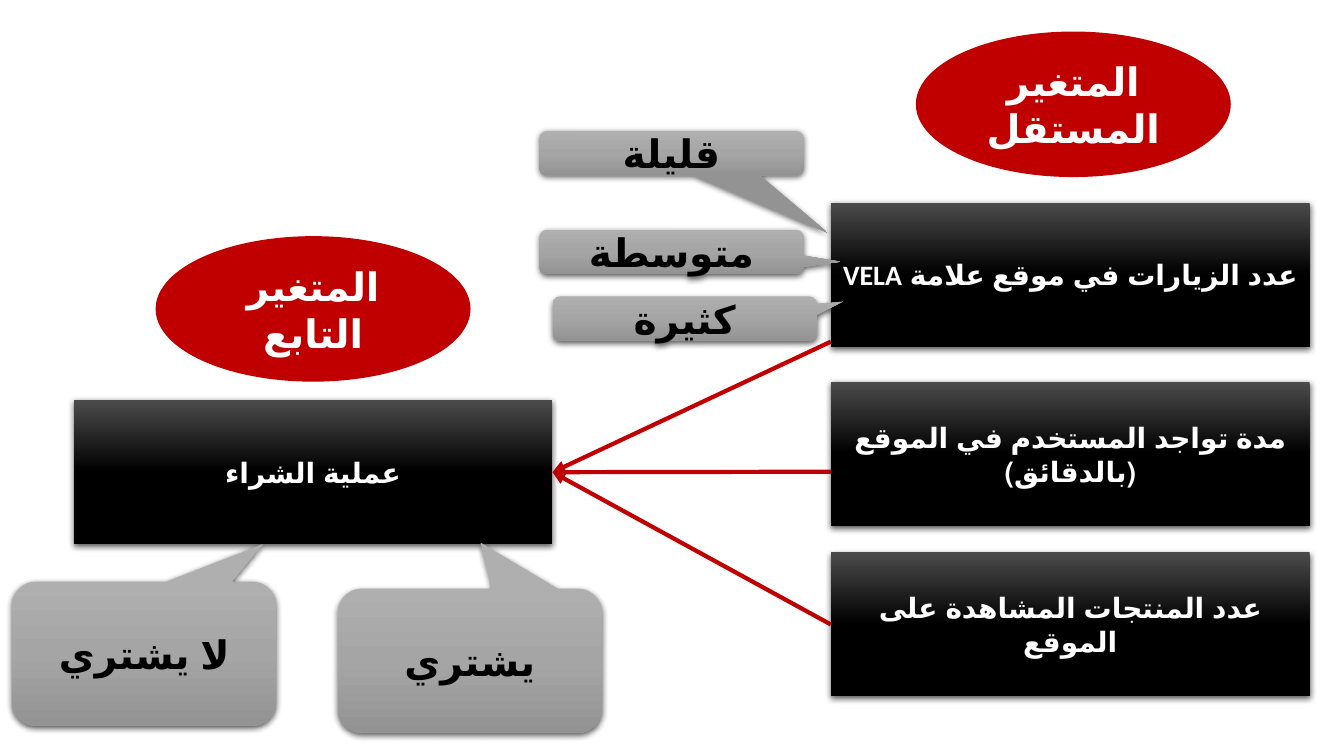
from copy import deepcopy
from dataclasses import dataclass

from pptx import Presentation
from pptx import util as u
from pptx.dml.color import RGBColor
from pptx.enum import lang, shapes, text
from pptx.oxml import parse_xml
from pptx.oxml.ns import nsdecls, qn


@dataclass(frozen=True)
class Theme:
    font: str = "Calibri"
    red: str = "C00000"
    white: str = "FFFFFF"
    black: str = "000000"
    dark: tuple = ("4B4B4B", "000000", "000000")
    grey: tuple = ("AFAFAF", "A5A5A5", "939393")
    box_size: int = 20
    label_size: int = 28
    outline: int = 1
    arrow: int = 3


THEME = Theme()
BOX_SIZE = (4.75, 1.43)
OVAL_SIZE = (3.11, 1.43)
CALLOUT_WIDTH = 2.62
RECTANGLE_LEFT, RECTANGLE_RIGHT = 1, 3


def rgb(value):
    return RGBColor.from_string(value)


def apply_format(target, values):
    for name, value in values.items():
        setattr(target, name, value)


def add_block(slide, kind, position, size, words, font_size, color, rtl=False):
    """Add a shape with centred bold Arabic text."""
    shape = slide.shapes.add_shape(kind, *map(u.Inches, position + size))
    shape.shadow.inherit = False
    frame = shape.text_frame
    apply_format(frame, {"word_wrap": True,
                         "vertical_anchor": text.MSO_ANCHOR.MIDDLE})
    paragraph = frame.paragraphs[0]
    paragraph.alignment = text.PP_ALIGN.CENTER
    if rtl:
        paragraph._p.get_or_add_pPr().set("rtl", "1")
    run = paragraph.add_run()
    run.text = words
    apply_format(run.font, {"name": THEME.font, "size": u.Pt(font_size), "bold": True,
                            "language_id": lang.MSO_LANGUAGE_ID.ARABIC_ALGERIA})
    run.font.color.rgb = rgb(color)
    return shape


def add_gloss(shape, colors):
    """Give a shape a vertical three-stop gradient and a soft shadow."""
    shape.line.fill.background()
    shape.fill.gradient()
    shape.fill.gradient_angle = 270
    properties = shape._element.spPr
    stop_list = properties.find(qn("a:gradFill")).find(qn("a:gsLst"))
    stop_list.append(deepcopy(stop_list[-1]))
    for stop, color, place in zip(shape.fill.gradient_stops, colors, (0, 0.5, 1)):
        stop.color.rgb = rgb(color)
        stop.position = place
    properties.find(qn("a:effectLst")).append(parse_xml(
        f'<a:outerShdw {nsdecls("a")} blurRad="{u.Pt(4.5)}" dist="{u.Pt(1.5)}" '
        f'dir="5400000" rotWithShape="0"><a:srgbClr val="{THEME.black}">'
        '<a:alpha val="63000"/></a:srgbClr></a:outerShdw>'))


def add_variable_box(slide, left, top, words):
    box = add_block(slide, shapes.MSO_SHAPE.RECTANGLE, (left, top), BOX_SIZE,
                    words, THEME.box_size, THEME.white, rtl=True)
    add_gloss(box, THEME.dark)
    return box


def add_heading_oval(slide, left, top, words):
    oval = add_block(slide, shapes.MSO_SHAPE.OVAL, (left, top), OVAL_SIZE,
                     words, THEME.label_size, THEME.white)
    oval.fill.solid()
    oval.fill.fore_color.rgb = rgb(THEME.red)
    oval.line.color.rgb = rgb(THEME.red)
    oval.line.width = u.Pt(THEME.outline)


def add_callout(slide, left, top, height, pointer, words):
    callout = add_block(slide, shapes.MSO_SHAPE.ROUNDED_RECTANGULAR_CALLOUT,
                        (left, top), (CALLOUT_WIDTH, height),
                        words, THEME.label_size, THEME.black)
    for index, offset in enumerate(pointer):
        callout.adjustments[index] = offset
    add_gloss(callout, THEME.grey)


def add_arrow(slide, start, target, source=None):
    """Draw an arrow to the right side of target, joined to source if given."""
    arrow = slide.shapes.add_connector(
        shapes.MSO_CONNECTOR.STRAIGHT, *map(u.Inches, start + start))
    if source is not None:
        arrow.begin_connect(source, RECTANGLE_LEFT)
    arrow.end_connect(target, RECTANGLE_RIGHT)
    arrow.line.color.rgb = rgb(THEME.red)
    arrow.line.width = u.Pt(THEME.arrow)
    arrow.line._get_or_add_ln().append(
        parse_xml(f'<a:tailEnd {nsdecls("a")} type="triangle"/>'))
    arrow._element.spPr.append(parse_xml(f'<a:effectLst {nsdecls("a")}/>'))


def main():
    presentation = Presentation()
    apply_format(presentation, {"slide_width": u.Inches(13.33),
                                "slide_height": u.Inches(7.5)})
    slide = presentation.slides.add_slide(presentation.slide_layouts[6])

    # Independent variables on the right, dependent variable on the left
    independent_left = 8.24
    visits, duration, products = [
        add_variable_box(slide, independent_left, top, words) for top, words in (
            (2.01, "عدد الزيارات في موقع علامة VELA"),
            (3.79, "مدة تواجد المستخدم في الموقع (بالدقائق)"),
            (5.48, "عدد المنتجات المشاهدة على الموقع"))]
    purchase = add_variable_box(slide, 0.73, 3.97, "عملية الشراء")

    # Headings
    add_heading_oval(slide, 9.09, 0.32, "المتغير المستقل")
    add_heading_oval(slide, 1.55, 2.35, "المتغير التابع")

    # Possible values of the purchase and of the visits
    for left, top, height, pointer, words in (
            (3.35, 5.84, 1.43, (0.04, -0.82), "يشتري"),
            (0.12, 5.77, 1.43, (0.45, -0.76), "لا يشتري"),
            (5.35, 1.3, 0.44, (0.59, 1.79), "قليلة"),
            (5.35, 2.28, 0.44, (0.64, 0.22), "متوسطة"),
            (5.48, 2.94, 0.44, (0.6, -0.38), "كثيرة")):
        add_callout(slide, left, top, height, pointer, words)

    # Influence of each independent variable
    add_arrow(slide, (independent_left, 3.39), purchase)
    add_arrow(slide, (independent_left, 4.68), purchase)
    add_arrow(slide, (independent_left, 6.19), purchase, products)

    presentation.save("out.pptx")


if __name__ == "__main__":
    main()
